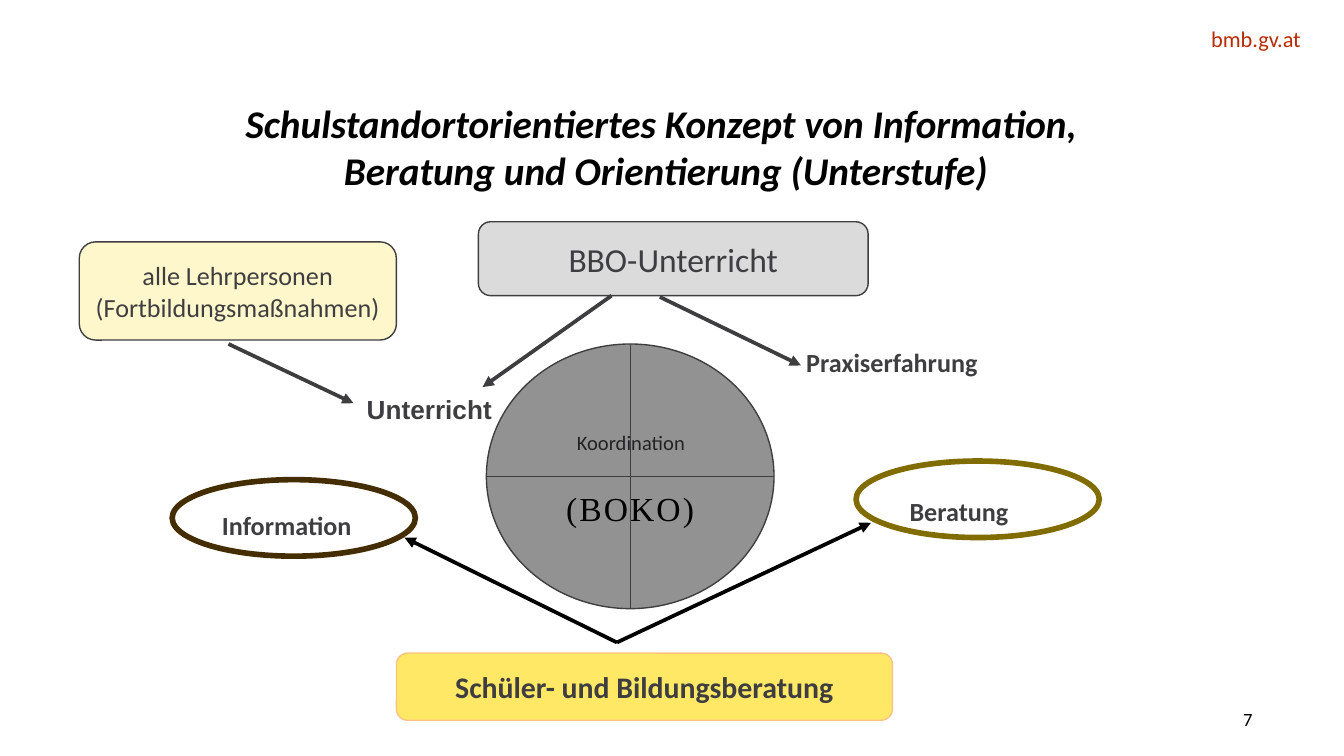
from lxml import etree
from pptx import Presentation
from pptx.dml.color import RGBColor
from pptx.enum.shapes import MSO_CONNECTOR, MSO_SHAPE
from pptx.enum.text import MSO_ANCHOR, PP_ALIGN
from pptx.oxml.ns import qn
from pptx.util import Pt

STRAIGHT = MSO_CONNECTOR.STRAIGHT
ROUNDED, OVAL, CROSSED = MSO_SHAPE.ROUNDED_RECTANGLE, MSO_SHAPE.OVAL, MSO_SHAPE.FLOWCHART_OR
TOP, MIDDLE = MSO_ANCHOR.TOP, MSO_ANCHOR.MIDDLE
LEFT, CENTER, RIGHT = PP_ALIGN.LEFT, PP_ALIGN.CENTER, PP_ALIGN.RIGHT

COLORS = {
    "black": "000000", "dark": "3E3E40", "red": "B92B06", "gray": "DBDBDB",
    "cream": "FFF7CC", "yellow": "FFE866", "orange": "FFC285",
    "brown": "442D00", "olive": "806C00",
}


def color(name):
    return RGBColor.from_string(COLORS[name])


class Diagram:
    """Holds the text style and the current slide."""

    font = "Calibri"

    def __init__(self, slide):
        self.slide = slide

    def set_text(self, shape, text, size, ink="dark", bold=False, italic=False,
                 align=CENTER, anchor=MIDDLE, font=None, wrap=False):
        frame = shape.text_frame
        frame.text = text
        frame.word_wrap = wrap
        frame.vertical_anchor = anchor
        for paragraph in frame.paragraphs:
            paragraph.alignment = align
            for run in paragraph.runs:
                run.font.name = font or self.font
                run.font.size = Pt(size)
                run.font.bold = bold
                run.font.italic = italic
                run.font.color.rgb = color(ink)

    def label(self, box, text, size, inset=True, anchor=TOP, **style):
        shape = self.slide.shapes.add_textbox(*map(Pt, box))
        self.set_text(shape, text, size, anchor=anchor, **style)
        if not inset:
            frame = shape.text_frame
            frame.margin_left = frame.margin_right = 0
            frame.margin_top = frame.margin_bottom = 0

    def shape(self, kind, box, fill, line, width=0.75):
        shape = self.slide.shapes.add_shape(kind, *map(Pt, box))
        shape.shadow.inherit = False
        if fill:
            shape.fill.solid()
            shape.fill.fore_color.rgb = color(fill)
        else:
            shape.fill.background()
        shape.line.color.rgb = color(line)
        shape.line.width = Pt(width)
        return shape

    def box(self, box, text, size, fill, line="dark", **style):
        self.set_text(self.shape(ROUNDED, box, fill, line), text, size, **style)

    def arrow(self, start, end, line="dark"):
        connector = self.slide.shapes.add_connector(STRAIGHT, *map(Pt, start + end))
        connector.line.color.rgb = color(line)
        connector.line.width = Pt(2)
        properties = connector._element.spPr
        etree.SubElement(properties.find(qn("a:ln")), qn("a:tailEnd"), type="triangle")
        etree.SubElement(properties, qn("a:effectLst"))

    def coordination_circle(self, box, text):
        circle = self.shape(CROSSED, box, "dark", "dark")
        solid = circle._element.spPr.find(qn("a:solidFill"))
        etree.SubElement(solid[0], qn("a:alpha"), val="56000")
        self.set_text(circle, text, 18, "black", font="Times New Roman")
        # The text sits below the horizontal line of the circle
        circle.text_frame.margin_top = Pt(38)
        circle.text_frame.paragraphs[0].runs[0].font._element.set("spc", "110")


def main():
    presentation = Presentation()
    presentation.slide_width, presentation.slide_height = Pt(720), Pt(405)
    diagram = Diagram(presentation.slides.add_slide(presentation.slide_layouts[6]))

    # Header and title
    diagram.label((523.4, 13.7, 173.5, 14.4), "bmb.gv.at", 12, inset=False,
                  ink="red", align=RIGHT, wrap=True)
    diagram.label((42.5, 53.3, 628.6, 48.2),
                  "Schulstandortorientiertes Konzept von Information, \v"
                  "Beratung und Orientierung (Unterstufe)",
                  21, inset=False, ink="black", bold=True, italic=True)

    # Teaching: boxes, arrows and their targets
    diagram.box((256.3, 118.8, 208.8, 39.6), "BBO-Unterricht", 18, "gray")
    diagram.box((42.5, 129.6, 169.9, 52.6),
                "alle Lehrpersonen\v(Fortbildungsmaßnahmen)", 14, "cream")
    for start, end in [((327.6, 158.4), (258.5, 207.4)),
                       ((353.5, 159.1), (429.1, 195.8)),
                       ((122.4, 184.3), (189.4, 216))]:
        diagram.arrow(start, end)
    diagram.label((189.4, 207.4, 82.1, 24.5), "Unterricht", 14, bold=True,
                  align=LEFT, font="Arial")
    diagram.label((424.8, 182.2, 107.3, 24.5), "Praxiserfahrung", 14, bold=True, align=LEFT)

    # Counselling: ovals, arrows from one origin, and the box below
    for left, top, line in [(92.2, 257, "brown"), (458.6, 247, "olive")]:
        diagram.shape(OVAL, (left, top, 130.3, 41), None, line, 3)
    diagram.label((111.6, 269.3, 84.2, 24.5), "Information", 14, bold=True)
    diagram.label((480.2, 262.1, 67.7, 24.5), "Beratung", 14, bold=True, align=LEFT)
    for end in [(466.6, 280.1), (216.7, 288)]:
        diagram.arrow((330.5, 344.2), end, "black")
    diagram.box((212.4, 349.9, 265.7, 36), "Schüler- und Bildungsberatung", 16,
                "yellow", "orange", bold=True)

    # Coordination in the centre, seen through the translucent circle
    diagram.label((274.3, 226.8, 127.4, 33.8), "Koordination", 11, ink="black")
    diagram.coordination_circle((260.6, 184.3, 154.1, 141.8), "(BOKO)")

    # Slide number
    diagram.label((595.4, 377.3, 75.6, 15.8), "7", 10, inset=False, anchor=MIDDLE,
                  ink="black", align=RIGHT, wrap=True)

    presentation.save("out.pptx")


if __name__ == "__main__":
    main()
